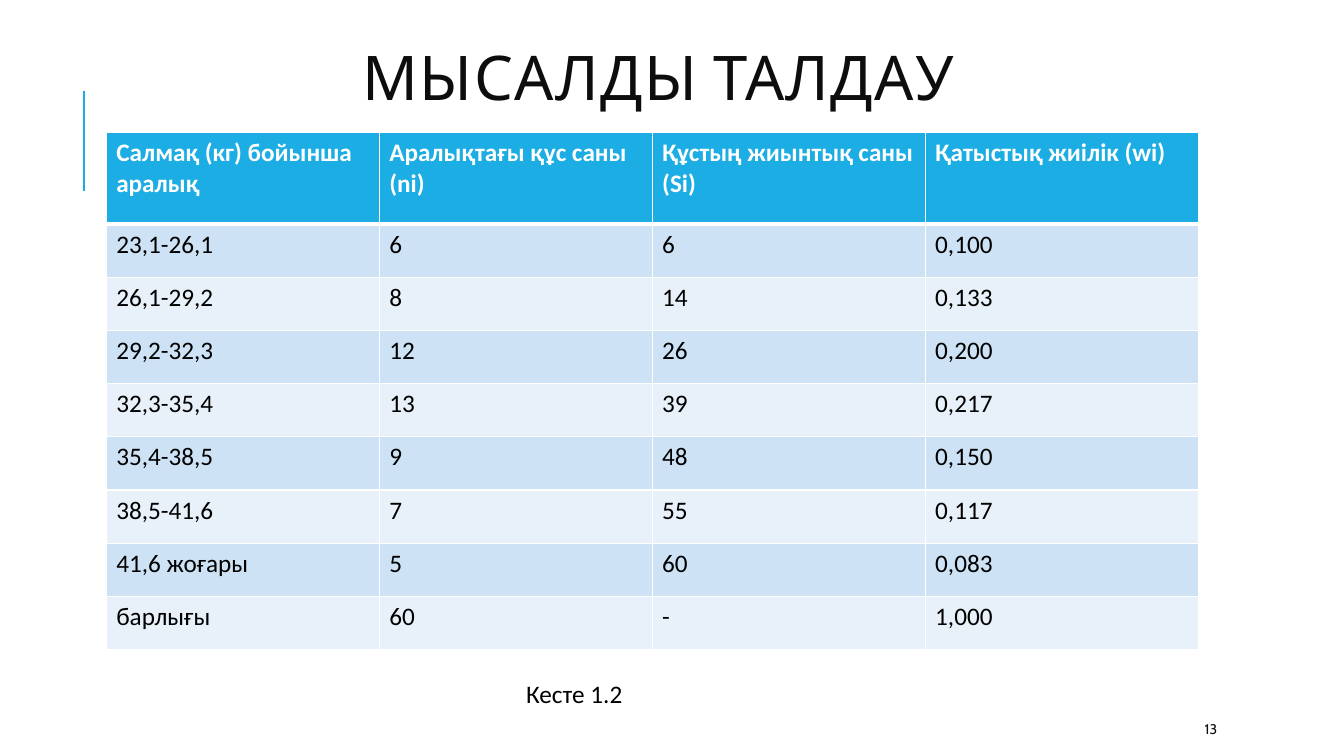
import dataclasses

import pptx
import pptx.dml.color
import pptx.enum.shapes
import pptx.enum.text
import pptx.oxml
import pptx.oxml.ns
import pptx.util
from lxml import etree


@dataclasses.dataclass(frozen=True)
class Theme:
    heading_font: str = "Cabin"
    body_font: str = "Calibri"
    accent: str = "1CADE4"
    bands: tuple = ("CDE3F5", "E8F1FA")
    title_ink: str = "0D0D0D"
    body_ink: str = "000000"
    white: str = "FFFFFF"
    title_size: int = 44
    body_size: int = 18
    number_size: int = 10


def rgb(color):
    return pptx.dml.color.RGBColor.from_string(color)


class SlideBuilder:
    COLUMNS = 100
    ROWS = 100

    def __init__(self, prs, theme):
        self.theme = theme
        self.column = prs.slide_width / self.COLUMNS
        self.row = prs.slide_height / self.ROWS
        self.slide = prs.slides.add_slide(prs.slide_layouts[5])
        self.shapes = self.slide.shapes

    def x(self, columns):
        return round(columns * self.column)

    def y(self, rows):
        return round(rows * self.row)

    def box(self, left, top, width, height):
        return self.x(left), self.y(top), self.x(width), self.y(height)

    def run(self, p, text, font, size, color, bold=False):
        r = p.add_run()
        r.text = text
        r.font.name = font
        r.font.size = pptx.util.Pt(size)
        r.font.color.rgb = rgb(color)
        r.font.bold = bold
        return r

    def title(self, text, *box):
        sp = self.shapes.title
        sp.left, sp.top, sp.width, sp.height = self.box(*box)
        tf = sp.text_frame
        tf.auto_size = pptx.enum.text.MSO_AUTO_SIZE.NONE
        tf.vertical_anchor = pptx.enum.text.MSO_ANCHOR.MIDDLE
        p = tf.paragraphs[0]
        p.alignment = pptx.enum.text.PP_ALIGN.CENTER
        p.line_spacing = 0.8
        r = self.run(p, text, self.theme.heading_font,
                     self.theme.title_size, self.theme.title_ink)
        r.font._element.set("spc", "100")

    def text(self, text, font, size, color, *box, middle=False, wrap=True):
        sp = self.shapes.add_textbox(*self.box(*box))
        tf = sp.text_frame
        tf.word_wrap = wrap
        if middle:
            tf.vertical_anchor = pptx.enum.text.MSO_ANCHOR.MIDDLE
        if not wrap:
            tf.auto_size = pptx.enum.text.MSO_AUTO_SIZE.SHAPE_TO_FIT_TEXT
        self.run(tf.paragraphs[0], text, font, size, color)

    def line(self, x1, y1, x2, y2, width):
        cxn = self.shapes.add_connector(
            pptx.enum.shapes.MSO_CONNECTOR.STRAIGHT,
            self.x(x1), self.y(y1), self.x(x2), self.y(y2))
        cxn.line.color.rgb = rgb(self.theme.accent)
        cxn.line.width = pptx.util.Pt(width)
        etree.SubElement(cxn._element.spPr, pptx.oxml.ns.qn("a:effectLst"))

    def borders(self, cell, **widths):
        tc_pr = cell._tc.get_or_add_tcPr()
        for side in "LRTB":
            width = pptx.util.Pt(widths.get(side, 1))
            tc_pr.append(pptx.oxml.parse_xml(
                f'<a:ln{side} {pptx.oxml.ns.nsdecls("a")} w="{width}">'
                f'<a:solidFill><a:srgbClr val="{self.theme.white}"/></a:solidFill>'
                f'</a:ln{side}>'))

    def table(self, rows, left, top, width, header_height, row_height):
        heights = [header_height] + [row_height] * (len(rows) - 1)
        frame = self.shapes.add_table(
            len(rows), len(rows[0]), *self.box(left, top, width, sum(heights)))
        table = frame.table
        for column in table.columns:
            column.width = self.x(width / len(rows[0]))
        for i, (values, height) in enumerate(zip(rows, heights)):
            table.rows[i].height = self.y(height)
            header = i == 0
            fill = self.theme.accent if header else self.theme.bands[(i - 1) % 2]
            ink = self.theme.white if header else self.theme.body_ink
            for j, value in enumerate(values):
                cell = table.cell(i, j)
                self.borders(cell, T=3 if i == 1 else 1, B=3 if header else 1)
                cell.fill.solid()
                cell.fill.fore_color.rgb = rgb(fill)
                self.run(cell.text_frame.paragraphs[0], value, self.theme.body_font,
                         self.theme.body_size, ink, bold=header)


FREQUENCIES = [
    ("Салмақ (кг) бойынша аралық", "Аралықтағы құс саны (ni)",
     "Құстың жиынтық саны (Si)", "Қатыстық жиілік (wi)"),
    ("23,1-26,1", "6", "6", "0,100"),
    ("26,1-29,2", "8", "14", "0,133"),
    ("29,2-32,3", "12", "26", "0,200"),
    ("32,3-35,4", "13", "39", "0,217"),
    ("35,4-38,5", "9", "48", "0,150"),
    ("38,5-41,6", "7", "55", "0,117"),
    ("41,6 жоғары", "5", "60", "0,083"),
    ("барлығы", "60", "-", "1,000"),
]


def main():
    prs = pptx.Presentation()
    prs.slide_width = pptx.util.Inches(13.33)
    prs.slide_height = pptx.util.Inches(7.5)
    theme = Theme()
    s = SlideBuilder(prs, theme)
    s.line(6.25, 25.33, 6.25, 12, 1.5)
    s.title("МЫСАЛДЫ ТАЛДАУ", 9.15, 0, 79.74, 21.87)
    s.text("13", theme.heading_font, theme.number_size, theme.title_ink,
           88.9, 94.4, 7.95, 4, middle=True)
    s.table(FREQUENCIES, 7.9, 17.5, 81.25, 12.13, 7.04)
    s.text("Кесте 1.2", theme.body_font, theme.body_size, theme.body_ink,
           38.41, 89.07, 8.78, 5.33, wrap=False)
    prs.save("out.pptx")


if __name__ == "__main__":
    main()
